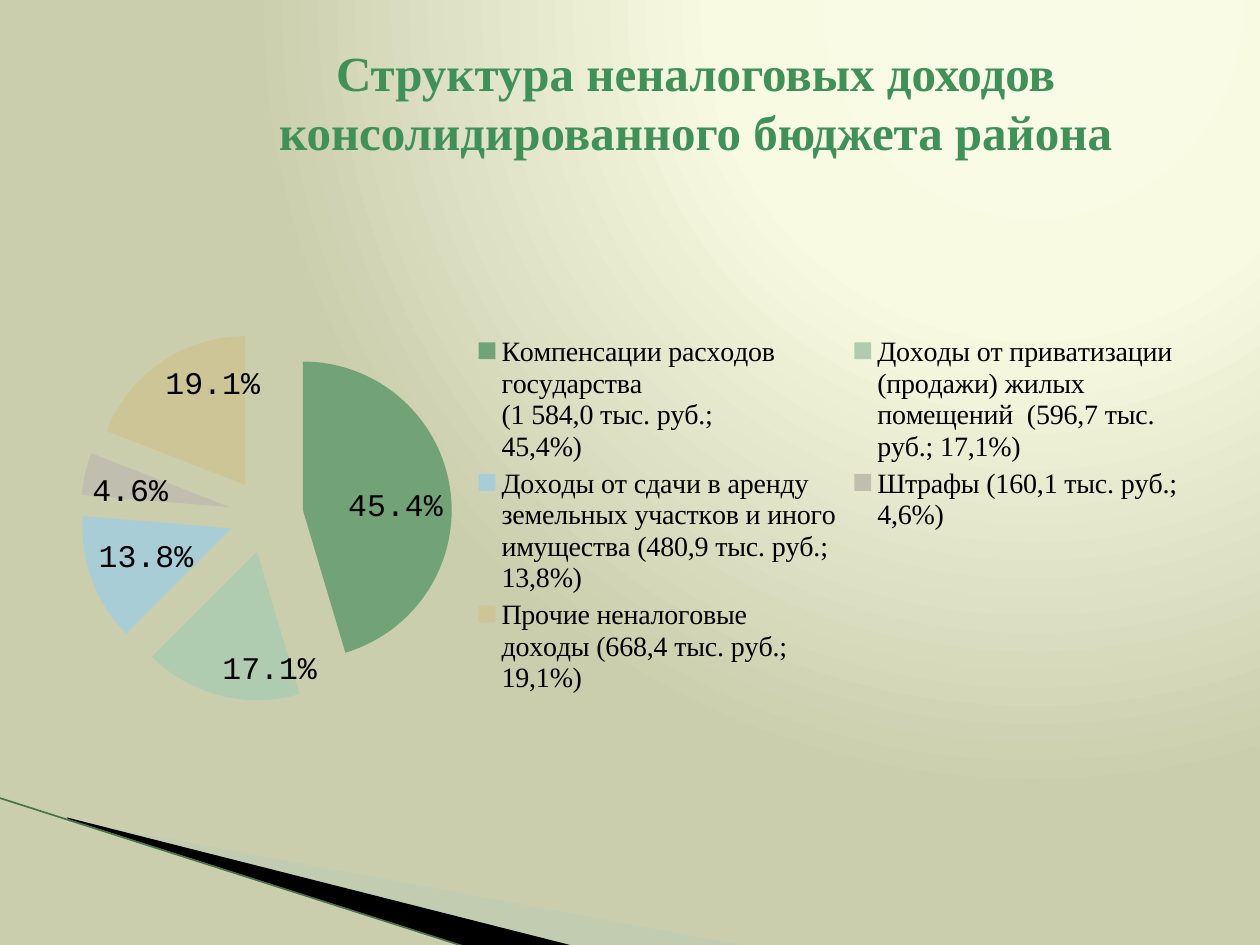
from dataclasses import dataclass

from pptx import Presentation
from pptx.chart import data as cd
from pptx.dml.color import RGBColor
from pptx.enum import chart as ch, shapes, text
from pptx.oxml import ns, parse_xml
from pptx.util import Cm, Pt


@dataclass(frozen=True)
class Theme:
    """Colours, fonts and type sizes of the slide."""
    title: str = "3F9158"
    ink: str = "000000"
    mist: str = "B3CBB5"
    line: str = "47724B"
    slices: tuple = ("72A376", "B0CCB0", "A8CDD7", "C0BEAF", "CEC597")
    glow: tuple = ((0, "F9FBE7"), (40, "F8FAE2"), (100, "CBCEAD"))
    serif: str = "Times New Roman"
    mono: str = "Courier New"
    title_size: int = 28
    label_size: int = 18
    legend_size: int = 16


T = Theme()
REVENUES = (
    ("Компенсации расходов государства\n(1 584,0 тыс. руб.;\n45,4%)", 0.454),
    ("Доходы от приватизации (продажи) жилых помещений  (596,7 тыс. руб.; 17,1%)", 0.171),
    ("Доходы от сдачи в аренду земельных участков и иного имущества (480,9 тыс. руб.; 13,8%)", 0.138),
    ("Штрафы (160,1 тыс. руб.; 4,6%)", 0.046),
    ("Прочие неналоговые доходы (668,4 тыс. руб.; 19,1%)", 0.191),
)


def element(xml):
    """Parse a DrawingML or chart fragment."""
    return parse_xml(f"<root {ns.nsdecls('a', 'c')}>{xml}</root>")[0]


def style_font(font, name, size, color, bold=False):
    """Set the face, size, colour and weight of a font."""
    font.name, font.size, font.bold = name, Pt(size), bold
    font.color.rgb = RGBColor.from_string(color)


def write(tf, content, align=text.PP_ALIGN.LEFT, **fmt):
    """Put one formatted paragraph in a text frame."""
    p = tf.paragraphs[0]
    p.alignment = align
    r = p.add_run()
    r.text = content
    style_font(r.font, **fmt)


def paint_background(s):
    """Fill the background with a glow from the upper right."""
    s.background.fill.gradient()
    old = next(s.background._cSld.iter(ns.qn("a:gradFill")))
    stops = "".join(f'<a:gs pos="{pos * 1000}"><a:srgbClr val="{color}"/></a:gs>'
                    for pos, color in T.glow)
    old.getparent().replace(old, element(
        f'<a:gradFill rotWithShape="1"><a:gsLst>{stops}</a:gsLst><a:path path="circle">'
        '<a:fillToRect l="65000" t="0" r="0" b="98000"/></a:path></a:gradFill>'))


def add_wedge(s, x, y, points, color, opacity=100):
    """Draw a filled sliver from points relative to a corner."""
    pts = [(Cm(x + dx), Cm(y + dy)) for dx, dy in points]
    builder = s.shapes.build_freeform(*pts[0])
    builder.add_line_segments(pts[1:], close=True)
    sp = builder.convert_to_shape()
    sp.shadow.inherit = False
    sp.line.fill.background()
    sp.fill.solid()
    sp.fill.fore_color.rgb = RGBColor.from_string(color)
    if opacity < 100:
        clr = next(sp._element.spPr.iter(ns.qn("a:srgbClr")))
        clr.append(element(f'<a:alpha val="{opacity * 1000}"/>'))


def add_corner(s, x, y, w, h):
    """Draw the slivers and the slanted line of the lower left corner."""
    add_wedge(s, x, y, [(1.43, 0.46), (15.14, 3), (11.61, 3), (1.43, 0.43)], T.mist, 40)
    add_wedge(s, x, y, [(1.38, 0.4), (11.64, 3), (9.48, h), (1.4, 0.43)], T.ink)
    cxn = s.shapes.add_connector(shapes.MSO_CONNECTOR.STRAIGHT,
                                 Cm(x), Cm(y), Cm(x + w), Cm(y + h))
    cxn.line.color.rgb = RGBColor.from_string(T.line)
    cxn.line.width = Pt(0.95)
    cxn._element.spPr.append(element("<a:effectLst/>"))


def add_revenue_chart(s, x, y, w, h):
    """Add the exploded pie of revenue shares with its legend."""
    data = cd.CategoryChartData(number_format="0.0%")
    data.categories = [name for name, _ in REVENUES]
    data.add_series("Series 1", [share for _, share in REVENUES])
    chart = s.shapes.add_chart(ch.XL_CHART_TYPE.PIE, Cm(x), Cm(y), Cm(w), Cm(h), data).chart
    style_font(chart.font, T.mono, T.label_size, T.ink)
    chart.has_title = False
    chart.has_legend = True
    chart.legend.position = ch.XL_LEGEND_POSITION.RIGHT
    chart.legend.include_in_layout = False
    style_font(chart.legend.font, T.serif, T.legend_size, T.ink)

    plot = chart.plots[0]
    plot.vary_by_categories = True
    series = plot.series[0]
    for i, color in enumerate(T.slices):
        fill = series.points[i].format.fill
        fill.solid()
        fill.fore_color.rgb = RGBColor.from_string(color)
    first = series._element.find(ns.qn("c:dPt"))
    first.addprevious(element('<c:explosion val="25"/>'))

    labels = series.data_labels
    labels.show_value = True
    labels.number_format = "0.0%"
    labels.number_format_is_linked = False
    labels.position = ch.XL_LABEL_POSITION.INSIDE_END
    style_font(labels.font, T.mono, T.label_size, T.ink)


def add_title(s, x, y, w, h):
    """Place and fill the title placeholder."""
    sp = s.shapes.title
    sp.left, sp.top, sp.width, sp.height = Cm(x), Cm(y), Cm(w), Cm(h)
    tf = sp.text_frame
    tf.word_wrap = True
    tf.vertical_anchor = text.MSO_ANCHOR.MIDDLE
    write(tf, "Структура неналоговых доходов консолидированного бюджета района",
          align=text.PP_ALIGN.CENTER, name=T.serif, size=T.title_size,
          color=T.title, bold=True)


def main():
    """Build the slide and save it."""
    prs = Presentation()
    prs.slide_width, prs.slide_height = Cm(25.4), Cm(19.05)
    s = prs.slides.add_slide(prs.slide_layouts[5])
    paint_background(s)
    add_corner(s, -0.03, 16.08, 9.45, 3.02)
    add_revenue_chart(s, 1.27, 4.11, 22.86, 12.57)
    add_title(s, 3.91, 0.76, 20.22, 2.57)
    prs.save("out.pptx")


if __name__ == "__main__":
    main()
